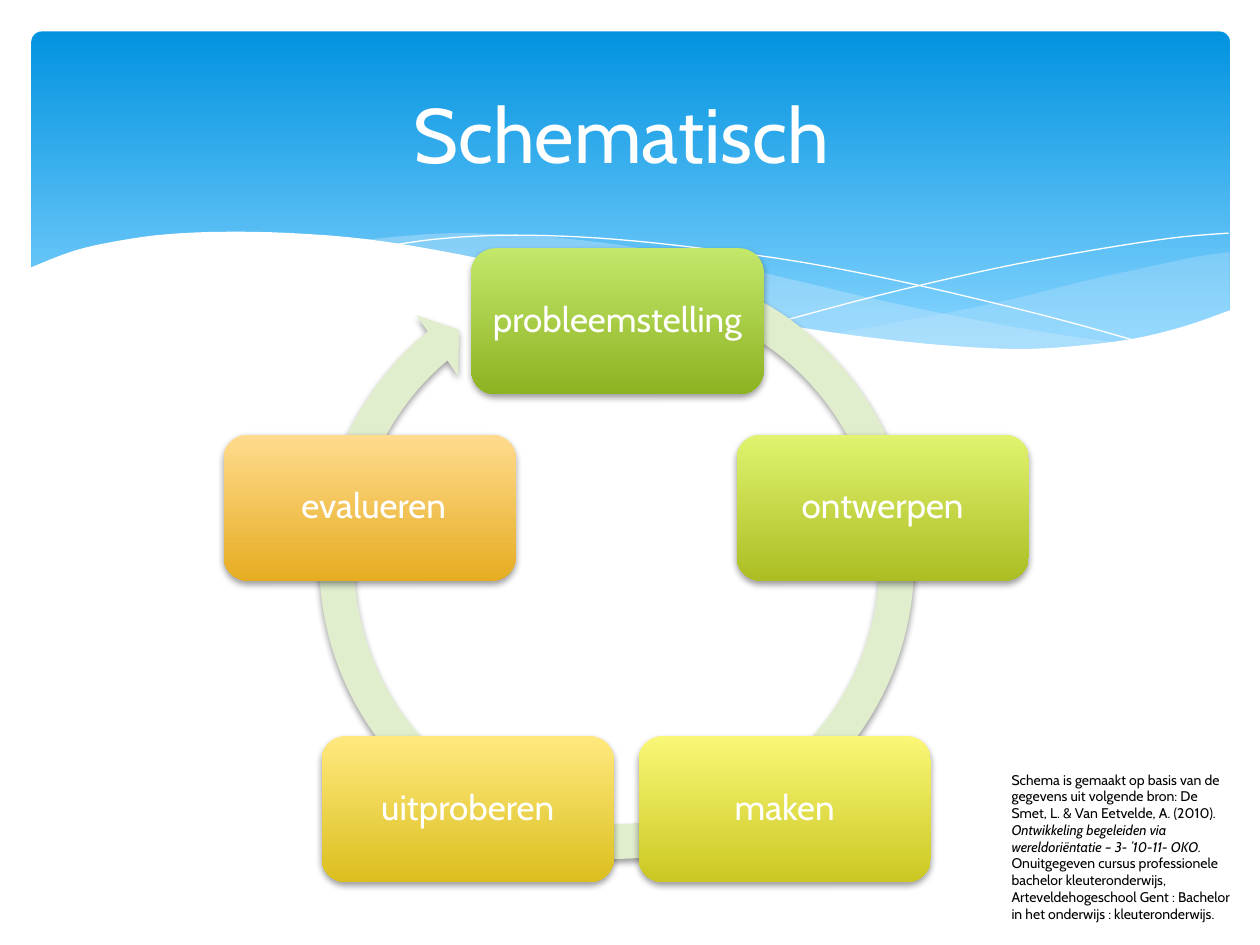
"""Build a slide with a five-step design cycle under a wavy blue header."""
import math
from dataclasses import dataclass
from typing import Optional

import pptx
import pptx.dml.color
import pptx.enum.shapes
import pptx.enum.text
import pptx.oxml
import pptx.oxml.ns
import pptx.util
from pptx.util import Inches

SHAPES = pptx.enum.shapes.MSO_SHAPE
ALIGN = pptx.enum.text.PP_ALIGN
MIDDLE = pptx.enum.text.MSO_ANCHOR.MIDDLE
FONT = "Cabin"
WHITE = "FFFFFF"
Points = list[tuple[float, float]]


@dataclass
class Wave:
    edges: list[Points]
    fill: Optional[str] = None
    alpha: int = 100


@dataclass
class Step:
    label: str
    top_color: str
    bottom_color: str
    shift: float = 0


WAVES = [
    Wave([[(9.76, 2), (9.48, 2.04), (9.06, 2.13), (8.61, 2.23), (8.05, 2.37),
           (7.53, 2.48), (7.06, 2.57), (6.61, 2.65)],
          [(6.61, 2.65), (7.05, 2.71), (7.45, 2.75), (8.03, 2.78), (8.54, 2.76),
           (8.97, 2.7), (9.35, 2.62), (9.76, 2.47)]], "C6E7FC", 29),
    Wave([[(8.93, 2.73), (8.37, 2.65), (7.75, 2.54), (7.06, 2.4), (6.29, 2.22),
           (5.69, 2.08), (5.14, 1.98), (4.65, 1.91), (4.2, 1.87), (3.61, 1.85),
           (3.13, 1.88), (2.86, 1.91)],
          [(2.86, 1.91), (3.42, 1.99), (4.04, 2.11), (4.49, 2.22), (5.3, 2.4),
           (6.01, 2.55), (6.65, 2.66), (7.22, 2.74), (7.73, 2.77), (8.18, 2.78),
           (8.57, 2.77), (8.93, 2.73)]], "C6E7FC", 40),
    Wave([[(3.09, 1.95), (3.44, 1.9), (3.87, 1.87), (4.33, 1.87), (4.89, 1.9),
           (5.56, 1.97), (6.36, 2.08), (7.27, 2.26), (8.31, 2.51), (9.07, 2.72)]]),
    Wave([[(6.13, 2.57), (6.95, 2.35), (7.76, 2.16), (8.36, 2.04), (8.95, 1.94),
           (9.38, 1.88), (9.75, 1.85)]]),
    Wave([[(9.77, 2.46), (9.4, 2.59), (8.99, 2.69), (8.5, 2.75), (8.09, 2.77),
           (7.61, 2.75), (7.08, 2.7), (6.48, 2.62), (5.79, 2.5), (5.03, 2.33),
           (4.47, 2.2), (3.65, 2.02), (2.92, 1.9), (2.3, 1.85), (1.77, 1.84),
           (1.32, 1.86), (0.95, 1.91), (0.59, 1.99), (0.23, 2.13)],
          [(0.23, 3.29), (9.77, 3.29)]], WHITE),
]
STEPS = [
    Step("probleemstelling", "C3E86A", "8DB222", -0.07),
    Step("ontwerpen", "E1F36F", "ACBE23"),
    Step("maken", "FAF777", "CBC823"),
    Step("uitproberen", "FFE97F", "DCBF1F"),
    Step(" evalueren", "FFDB8E", "E6AD22"),
]
STEP_WIDTH, STEP_HEIGHT = 2.32, 1.16
CENTER_X, CENTER_Y, RADIUS = 4.97, 4.69, 2.14


def color(value: str) -> pptx.dml.color.RGBColor:
    """Turn a hex string into a colour."""
    return pptx.dml.color.RGBColor.from_string(value)


def smooth(points: Points, parts: int = 4) -> Points:
    """Return a Catmull-Rom curve through the points."""
    if len(points) < 3:
        return points
    padded = [points[0], *points, points[-1]]
    curve = [points[0]]
    for a, b, c, d in zip(padded, padded[1:], padded[2:], padded[3:]):
        for part in range(1, parts + 1):
            t = part / parts
            curve.append(tuple(
                (2 * q + (r - p) * t + (2 * p - 5 * q + 4 * r - s) * t ** 2
                 + (3 * q - p - 3 * r + s) * t ** 3) / 2
                for p, q, r, s in zip(a, b, c, d)))
    return curve


def add_wave(page, wave: Wave) -> None:
    """Draw a filled wave, or a white hairline if it has no fill."""
    points = [(Inches(x), Inches(y)) for edge in wave.edges for x, y in smooth(edge)]
    builder = page.shapes.build_freeform(*points[0])
    builder.add_line_segments(points[1:], close=wave.fill is not None)
    shape = builder.convert_to_shape()
    shape.shadow.inherit = False
    if wave.fill is None:
        shape.fill.background()
        shape.line.color.rgb = color(WHITE)
        shape.line.width = pptx.util.Pt(0)
        return
    shape.line.fill.background()
    shape.fill.solid()
    shape.fill.fore_color.rgb = color(wave.fill)
    if wave.alpha < 100:
        tint = next(shape.element.iter(pptx.oxml.ns.qn("a:srgbClr")))
        alpha = tint.makeelement(pptx.oxml.ns.qn("a:alpha"), {"val": str(wave.alpha * 1000)})
        tint.append(alpha)


def add_preset(page, kind, left: float, top: float, width: float, height: float):
    """Add a preset shape without outline or shadow."""
    shape = page.shapes.add_shape(
        kind, Inches(left), Inches(top), Inches(width), Inches(height))
    shape.shadow.inherit = False
    shape.line.fill.background()
    return shape


def fill_gradient(shape, first: str, last: str, end: float = 1) -> None:
    """Fill a shape with a gradient from top to bottom."""
    shape.fill.gradient()
    shape.fill.gradient_angle = 270
    for stop, value, place in zip(shape.fill.gradient_stops, (first, last), (0, end)):
        stop.color.rgb = color(value)
        stop.position = place


def add_shadow(shape) -> None:
    """Give a shape a soft shadow below it."""
    effects = next(shape.element.iter(pptx.oxml.ns.qn("a:effectLst")))
    effects.append(pptx.oxml.parse_xml(
        '<a:outerShdw xmlns:a="http://schemas.openxmlformats.org/drawingml/2006/main" '
        'blurRad="50800" dist="25400" dir="5400000" rotWithShape="0">'
        '<a:srgbClr val="000000"><a:alpha val="38000"/></a:srgbClr></a:outerShdw>'))


def add_text(para, text: str, *, size: float, value: str = WHITE,
             italic: bool = False, align=ALIGN.LEFT) -> None:
    """Append a formatted span to a paragraph."""
    para.alignment = align
    span = para.add_run()
    span.text = text
    span.font.name = FONT
    span.font.size = pptx.util.Pt(size)
    span.font.italic = italic
    span.font.color.rgb = color(value)


def add_step(page, step: Step, index: int) -> None:
    """Draw a step at its place on the circle."""
    angle = 2 * math.pi * index / len(STEPS)
    left = CENTER_X + step.shift + RADIUS * math.sin(angle) - STEP_WIDTH / 2
    top = CENTER_Y - RADIUS * math.cos(angle) - STEP_HEIGHT / 2
    box = add_preset(page, SHAPES.ROUNDED_RECTANGLE, left, top, STEP_WIDTH, STEP_HEIGHT)
    fill_gradient(box, step.top_color, step.bottom_color)
    add_shadow(box)
    frame = box.text_frame
    frame.word_wrap = True
    frame.vertical_anchor = MIDDLE
    frame.margin_left = frame.margin_right = Inches(0.08)
    frame.margin_top = frame.margin_bottom = Inches(0.08)
    para = frame.paragraphs[0]
    para.line_spacing = 0.9
    add_text(para, step.label, size=20, align=ALIGN.CENTER)


def add_title(page) -> None:
    """Place the title in front of the header."""
    title = page.shapes.title
    title.left, title.top = Inches(0.5), Inches(0.37)
    title.width, title.height = Inches(9), Inches(1.37)
    title.text_frame.vertical_anchor = MIDDLE
    add_text(title.text_frame.paragraphs[0], "Schematisch ", size=44, align=ALIGN.CENTER)
    title.element.getparent().append(title.element)


def add_source(page) -> None:
    """Add the reference at the bottom right."""
    box = page.shapes.add_textbox(Inches(7.93), Inches(6.07), Inches(1.97), Inches(1.31))
    box.text_frame.word_wrap = True
    para = box.text_frame.paragraphs[0]
    for text, italic in (
        ("Schema is gemaakt op basis van de gegevens uit volgende bron: "
         "De Smet, L. & Van Eetvelde, A. (2010). ", False),
        ("Ontwikkeling begeleiden via wereldoriëntatie – 3- ’10-11- OKO.", True),
        (" Onuitgegeven cursus professionele bachelor kleuteronderwijs, "
         "Arteveldehogeschool Gent : Bachelor in het onderwijs : kleuteronderwijs.", False),
    ):
        add_text(para, text, size=8, value="000000", italic=italic)


def main() -> None:
    """Build and save the deck."""
    deck = pptx.Presentation()
    deck.slide_width, deck.slide_height = Inches(10), Inches(7.5)
    page = deck.slides.add_slide(deck.slide_layouts[5])
    header = add_preset(page, SHAPES.ROUNDED_RECTANGLE, 0.25, 0.25, 9.51, 2.7)
    header.adjustments[0] = 0.03
    fill_gradient(header, "0293E0", "83D3FE", 0.9)
    for wave in WAVES:
        add_wave(page, wave)
    add_title(page)
    cycle = add_preset(page, SHAPES.CIRCULAR_ARROW, 2.38, 1.94, 5.03, 5.03)
    for index, value in enumerate((0.055, 3.31, 138.15, 173.62, 0.058)):
        cycle.adjustments[index] = value
    cycle.fill.solid()
    cycle.fill.fore_color.rgb = color("E1EECD")
    add_shadow(cycle)
    for index, step in enumerate(STEPS):
        add_step(page, step, index)
    add_source(page)
    deck.save("out.pptx")


if __name__ == "__main__":
    main()
